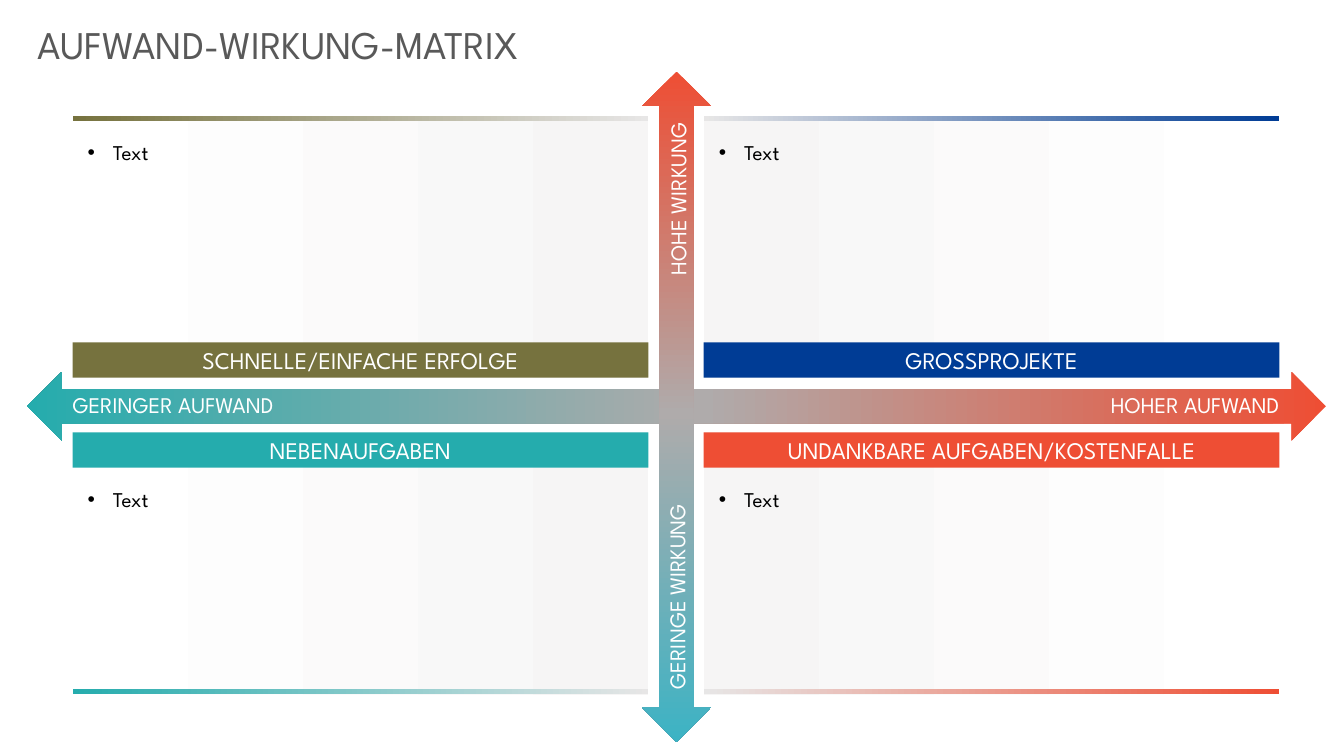
from copy import deepcopy
from dataclasses import dataclass

from lxml import etree
from pptx import Presentation
from pptx import util as u
from pptx.dml.color import RGBColor
from pptx.enum import shapes, text
from pptx.oxml.ns import qn


@dataclass(frozen=True)
class Theme:
    font: str = "League Spartan"
    white: str = "FFFFFF"
    black: str = "000000"
    grey: str = "595959"
    panel: str = "F6F5F5"
    pale: str = "E7E6E6"
    middle: str = "AFABAB"
    olive: str = "76723E"
    blue: str = "003C95"
    teal: str = "25ACAD"
    aqua: str = "3CB3C4"
    red: str = "EE4E34"
    title: int = 28
    header: int = 17
    axis: int = 16
    body: int = 15


def write(tf, words, size, color, align="LEFT", anchor="MIDDLE", insets=(0, 0, 0, 0), wrap=True):
    """Put one formatted paragraph into a text frame; insets are inches."""
    tf.auto_size = text.MSO_AUTO_SIZE.NONE
    tf.word_wrap = wrap
    tf.vertical_anchor = text.MSO_ANCHOR[anchor]
    tf.margin_left, tf.margin_top, tf.margin_right, tf.margin_bottom = map(u.Inches, insets)
    p = tf.paragraphs[0]
    p.alignment = text.PP_ALIGN[align]
    r = p.add_run()
    r.text = words
    r.font.name, r.font.size, r.font.bold = THEME.font, u.Pt(size), False
    r.font.color.rgb = RGBColor.from_string(color)
    return p


class MatrixSlide:
    """Boxes are (left, top, width, height) in hundredths of the slide."""

    def __init__(self, prs, theme):
        self.prs, self.theme = prs, theme
        self.s = prs.slides.add_slide(prs.slide_layouts.get_by_name("Comparison"))
        self.bodies = [ph for ph in self.s.placeholders if ph.placeholder_format.idx > 0]

    def frame(self, box):
        w, h = self.prs.slide_width, self.prs.slide_height
        return [round(share * side / 100) for share, side in zip(box, (w, h, w, h))]

    def place(self, sp, box):
        sp.left, sp.top, sp.width, sp.height = self.frame(box)

    def paint(self, sp, colors, middle=50, angle=0):
        """One colour gives a solid fill, more give an even gradient."""
        if len(colors) == 1:
            sp.fill.solid()
            sp.fill.fore_color.rgb = RGBColor.from_string(colors[0])
        else:
            sp.fill.gradient()
            sp.fill.gradient_angle = angle
            stops = sp._element.spPr.find(qn("a:gradFill")).find(qn("a:gsLst"))
            if len(colors) == 3:
                stops.insert(1, deepcopy(stops[0]))
            positions = (0, middle, 100) if len(colors) == 3 else (0, 100)
            for stop, color, position in zip(sp.fill.gradient_stops, colors, positions):
                stop.color.rgb = RGBColor.from_string(color)
                stop.position = position / 100
        sp.line.fill.background()

    def title(self, words, box):
        sp = self.s.shapes.title
        self.place(sp, box)
        write(sp.text_frame, words, self.theme.title, self.theme.grey,
              anchor="TOP", insets=(0.1, 0.05, 0.1, 0.05))

    def panel(self, words, box, colors, inset_top):
        sp = self.bodies.pop(0)
        self.place(sp, box)
        self.paint(sp, colors)
        p = write(sp.text_frame, words, self.theme.body, self.theme.black,
                  anchor="TOP", insets=(0.15, inset_top, 0.1, 0.05))
        p.line_spacing, p.space_before, p.space_after = 1.15, u.Pt(0), u.Pt(8)
        pPr = p._p.get_or_add_pPr()
        pPr.set("marL", str(u.Inches(0.25)))
        pPr.set("indent", str(u.Inches(-0.25)))
        etree.SubElement(pPr, qn("a:buFont")).set("typeface", "Arial")
        etree.SubElement(pPr, qn("a:buChar")).set("char", "•")

    def bar(self, box, colors, words=None):
        sp = self.s.shapes.add_shape(shapes.MSO_SHAPE.RECTANGLE, *self.frame(box))
        sp.shadow.inherit = False
        self.paint(sp, colors)
        if words:
            write(sp.text_frame, words, self.theme.header, self.theme.white, "CENTER")

    def arrow(self, box, colors, middle, rotation=0):
        sp = self.s.shapes.add_shape(shapes.MSO_SHAPE.UP_DOWN_ARROW, *self.frame(box))
        sp.shadow.inherit = False
        sp.adjustments[0], sp.adjustments[1] = 0.463, 0.5
        sp.rotation = rotation
        self.paint(sp, colors, middle, angle=270)

    def label(self, words, box, align="LEFT", rotation=0):
        sp = self.s.shapes.add_textbox(*self.frame(box))
        sp.rotation = rotation
        write(sp.text_frame, words, self.theme.axis, self.theme.white, align, wrap=not rotation)


THEME = Theme()

# Grid of the four quadrants
COLUMNS, ROWS = (5.4, 52.36), (15.3, 57.2)
WIDTH, HEIGHT = 42.84, 34.67
HEADER, RULE = 4.67, 0.67

QUADRANTS = [  # column, row, heading, colour
    (0, 0, "SCHNELLE/EINFACHE ERFOLGE", THEME.olive),
    (1, 0, "GROSSPROJEKTE", THEME.blue),
    (0, 1, "NEBENAUFGABEN", THEME.teal),
    (1, 1, "UNDANKBARE AUFGABEN/KOSTENFALLE", THEME.red),
]


def main():
    prs = Presentation()
    prs.slide_width, prs.slide_height = u.Inches(13.33), u.Inches(7.5)
    slide = MatrixSlide(prs, THEME)
    slide.title("AUFWAND-WIRKUNG-MATRIX", (2.03, 2, 55.96, 7.6))

    # Quadrants: headings face the centre, rules lie on the outer edge
    for col, row, heading, color in QUADRANTS:
        x, y = COLUMNS[col], ROWS[row]
        inner, outer = y + HEIGHT - HEADER, y
        if row:
            inner, outer = y, y + HEIGHT - RULE
        toward_centre = 1 if col == 0 else -1
        slide.panel("Text", (x, y, WIDTH, HEIGHT),
                    (THEME.white, THEME.panel)[::toward_centre], 0.5 if row else 0.2)
        slide.bar((x, inner, WIDTH, HEADER), (color,), heading)
        slide.bar((x, outer, WIDTH, RULE), (color, THEME.pale)[::toward_centre])

    # Axes
    slide.arrow((47.79, -32.13, 5.1, 171.73), (THEME.red, THEME.middle, THEME.teal), 48, 90)
    slide.arrow((47.79, 9.47, 5.1, 88.67), (THEME.red, THEME.middle, THEME.aqua), 51)

    # Axis labels
    slide.label("GERINGER AUFWAND", (5.4, 51.73, 18, 3.6))
    slide.label("HOHER AUFWAND", (77.2, 51.73, 18, 3.6), "RIGHT")
    slide.label("GERINGE WIRKUNG", (42.24, 74, 16.2, 5.47), rotation=270)
    slide.label("HOHE WIRKUNG", (43.66, 23.6, 13.5, 5.47), "CENTER", 270)

    prs.save("out.pptx")


if __name__ == "__main__":
    main()
